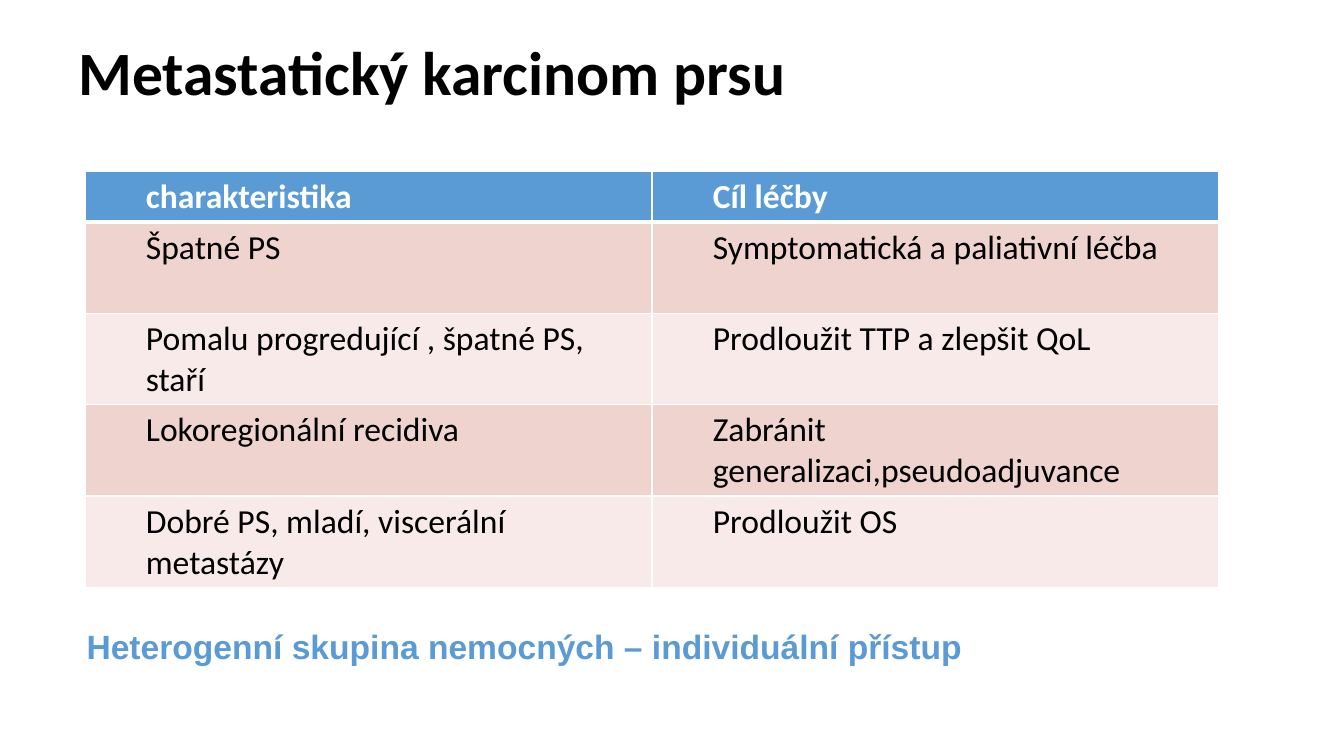
from lxml import etree
from pptx import Presentation
from pptx import util as u
from pptx.dml.color import RGBColor
from pptx.enum import text as t
from pptx.oxml import ns

PX = 9525
BLUE = RGBColor(0x5B, 0x9B, 0xD5)
ROSE = RGBColor(0xEE, 0xD3, 0xCF)
PALE = RGBColor(0xF7, 0xEA, 0xE9)
WHITE = RGBColor(0xFF, 0xFF, 0xFF)
BLACK = RGBColor(0, 0, 0)

ROWS = [
    ("charakteristika", "Cíl léčby"),
    ("Špatné PS", "Symptomatická a paliativní léčba"),
    ("Pomalu progredující , špatné PS, staří", "Prodloužit TTP a zlepšit QoL"),
    ("Lokoregionální recidiva", "Zabránit generalizaci,pseudoadjuvance"),
    ("Dobré PS, mladí, viscerální metastázy", "Prodloužit OS"),
]
COLUMN_WIDTH = 540
HEADER_HEIGHT = 48
ROW_HEIGHT = 87


def px(value):
    return u.Emu(value * PX)


def write(frame, content, size=24, font="Calibri", color=BLACK, bold=False,
          spacing=None, indent=0):
    frame.word_wrap = True
    para = frame.paragraphs[0]
    para.line_spacing = spacing
    if indent:
        para.level = 1
        properties = para._p.get_or_add_pPr()
        properties.set("marL", str(px(indent)))
        properties.set("indent", "0")
    span = para.add_run()
    span.text = content
    span.font.size = u.Pt(size)
    span.font.name = font
    span.font.bold = bold
    span.font.color.rgb = color


def add_text(page, content, left, top, width, height,
             anchor=t.MSO_ANCHOR.TOP, **style):
    box = page.shapes.add_textbox(px(left), px(top), px(width), px(height))
    box.text_frame.vertical_anchor = anchor
    write(box.text_frame, content, **style)


def add_border(cell, side, points):
    properties = cell._tc.get_or_add_tcPr()
    line = etree.SubElement(properties, ns.qn(f"a:ln{side}"), w=str(u.Pt(points)))
    fill = etree.SubElement(line, ns.qn("a:solidFill"))
    etree.SubElement(fill, ns.qn("a:srgbClr"), val=str(WHITE))


def format_cell(cell, content, row):
    header = row == 0
    add_border(cell, "L", 1)
    add_border(cell, "R", 1)
    add_border(cell, "T", 3 if row == 1 else 1)
    add_border(cell, "B", 3 if header else 1)
    cell.fill.solid()
    cell.fill.fore_color.rgb = BLUE if header else ROSE if row % 2 else PALE
    cell.margin_left = cell.margin_right = px(10)
    cell.margin_top = cell.margin_bottom = px(5)
    write(cell.text_frame, content, color=WHITE if header else BLACK,
          bold=header, indent=48)


def add_grid(page, rows, left, top):
    columns = len(rows[0])
    height = HEADER_HEIGHT + ROW_HEIGHT * (len(rows) - 1)
    grid = page.shapes.add_table(len(rows), columns, px(left), px(top),
                                 px(COLUMN_WIDTH * columns), px(height)).table
    for row, contents in enumerate(rows):
        grid.rows[row].height = px(ROW_HEIGHT if row else HEADER_HEIGHT)
        for column, content in enumerate(contents):
            format_cell(grid.cell(row, column), content, row)


def main():
    deck = Presentation()
    deck.slide_width, deck.slide_height = px(1280), px(720)
    page = deck.slides.add_slide(deck.slide_layouts[6])
    add_text(page, "Metastatický karcinom prsu", 65, 32, 1194, 80,
             anchor=t.MSO_ANCHOR.MIDDLE, size=44, bold=True, spacing=0.9)
    add_grid(page, ROWS, 81, 163)
    add_text(page, "Heterogenní skupina nemocných – individuální přístup",
             73, 591, 1073, 49, font="Arial", color=BLUE, bold=True)
    deck.save("out.pptx")


if __name__ == "__main__":
    main()
